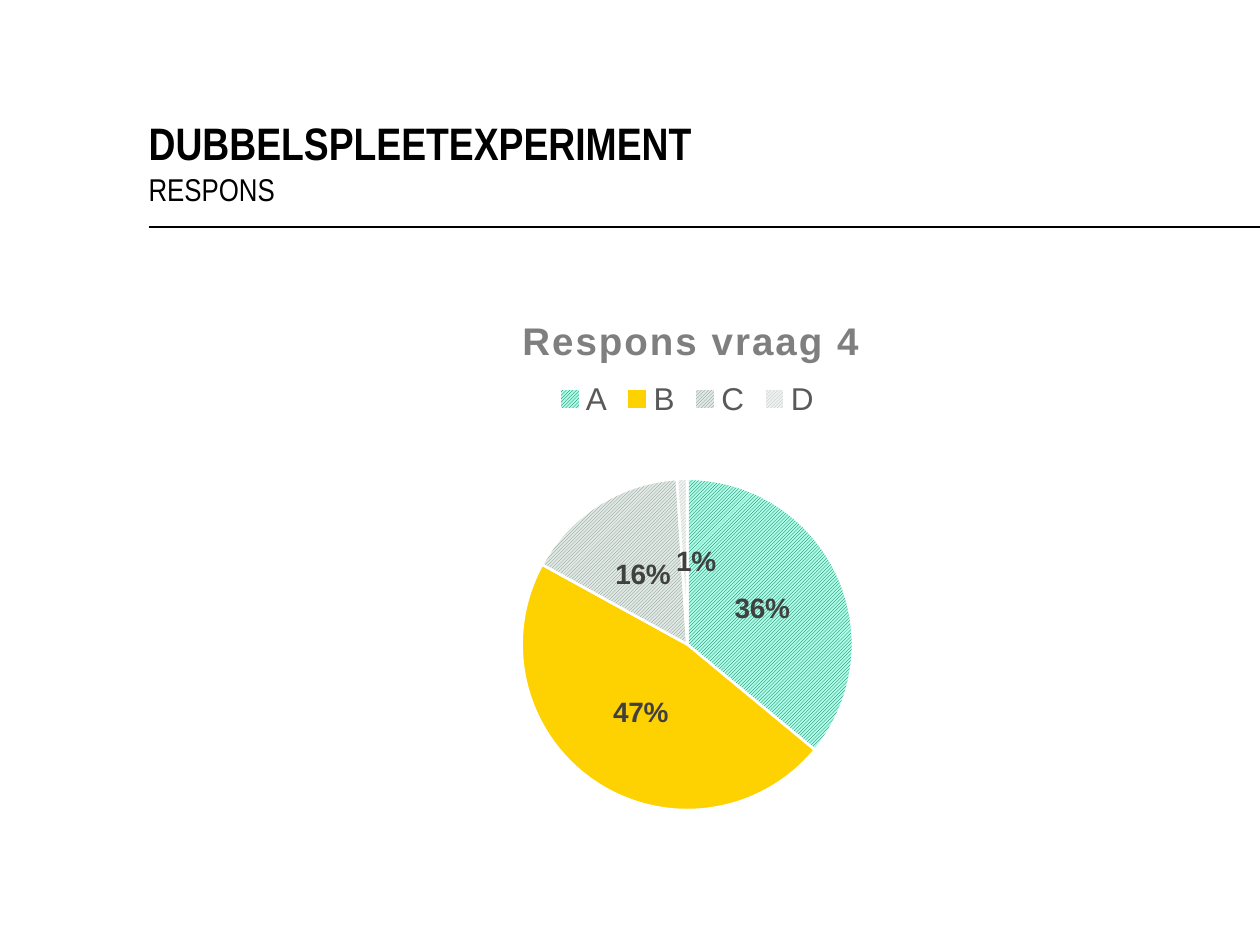
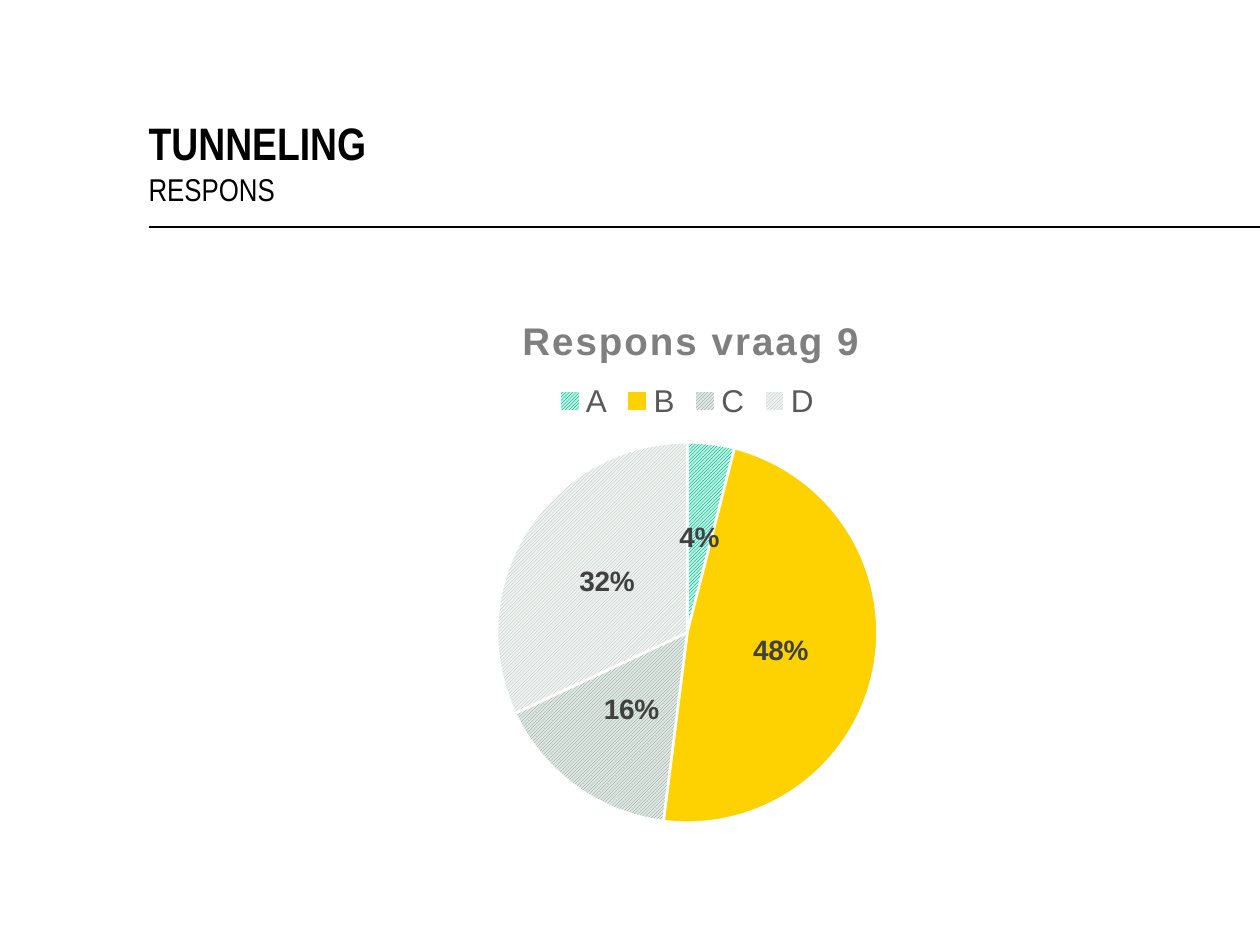
import pptx
import pptx.chart.data
import pptx.dml.color
import pptx.enum.chart
import pptx.enum.dml
import pptx.enum.shapes
import pptx.enum.text
import pptx.oxml
import pptx.oxml.ns
import pptx.util
from dataclasses import dataclass

Inches = pptx.util.Inches
Pt = pptx.util.Pt
RGBColor = pptx.dml.color.RGBColor
qn = pptx.oxml.ns.qn
nsdecls = pptx.oxml.ns.nsdecls

BLACK = RGBColor(0x00, 0x00, 0x00)
WHITE = RGBColor(0xFF, 0xFF, 0xFF)
CHART_TITLE_GREY = RGBColor(0x7F, 0x7F, 0x7F)
LEGEND_GREY = RGBColor(0x59, 0x59, 0x59)
LABEL_GREY = RGBColor(0x40, 0x40, 0x40)
YELLOW = RGBColor(0xFE, 0xD1, 0x00)
DARK_GREEN = RGBColor(0x00, 0x54, 0x3D)
MINT = RGBColor(0xAA, 0xFF, 0xE8)
SAGE = RGBColor(0x6C, 0x8D, 0x7D)
PALE_SAGE = RGBColor(0xE2, 0xE8, 0xE5)
MIST = RGBColor(0xAF, 0xBC, 0xB5)
PALE_MIST = RGBColor(0xEF, 0xF2, 0xF0)

HEADING_FONT = "Arial Narrow"
CHART_FONT = "Arial"
TITLE_ONLY = 5
SLIDE_WIDTH = 10
HEADER_LEFT, HEADER_WIDTH = 1.18, 8.5
RULE_TOP = 1.8
CHART_LEFT, CHART_TOP, CHART_WIDTH = 0.91, 2.24, 9.09

ANSWERS = ("A", "B", "C", "D")
ANSWER_FILLS = (
    (DARK_GREEN, MINT),
    (YELLOW, None),
    (SAGE, PALE_SAGE),
    (MIST, PALE_MIST),
)


@dataclass
class Response:
    topic: str
    question: str
    shares: tuple
    chart_height: float
    pie_top: float
    pie_size: float
    shifted_answer: int | None = None


RESPONSES = (
    Response("DUBBELSPLEETEXPERIMENT", "Respons vraag 4", (36, 47, 16, 1),
             4.34, 1.56, 2.63, shifted_answer=3),
    Response("TUNNELING", "Respons vraag 9", (4, 48, 16, 32),
             4.42, 1.27, 3.02),
)


def style_font(font, name, size, color, bold=False):
    font.name = name
    font.size = Pt(size)
    font.bold = bold
    font.color.rgb = color


def write_heading(shape, top, height, text, size, bold):
    shape.left, shape.top = Inches(HEADER_LEFT), Inches(top)
    shape.width, shape.height = Inches(HEADER_WIDTH), Inches(height)
    frame = shape.text_frame
    frame.auto_size = pptx.enum.text.MSO_AUTO_SIZE.NONE
    frame.word_wrap = True
    frame.vertical_anchor = pptx.enum.text.MSO_ANCHOR.BOTTOM
    frame.margin_left = frame.margin_right = 0
    frame.margin_top = frame.margin_bottom = 0
    paragraph = frame.paragraphs[0]
    paragraph.alignment = pptx.enum.text.PP_ALIGN.LEFT
    paragraph.line_spacing = Pt(25)
    run = paragraph.add_run()
    run.text = text
    style_font(run.font, HEADING_FONT, size, BLACK, bold)


def add_header(slide, topic):
    write_heading(slide.shapes.title, 0.55, 0.8, topic, 26, True)
    subtitle = slide.shapes.add_textbox(0, 0, 0, 0)
    write_heading(subtitle, 1.34, 0.31, "RESPONS", 18, False)
    rule = slide.shapes.add_connector(
        pptx.enum.shapes.MSO_CONNECTOR.STRAIGHT,
        Inches(HEADER_LEFT), Inches(RULE_TOP),
        Inches(SLIDE_WIDTH), Inches(RULE_TOP))
    rule.line.color.rgb = BLACK
    rule.line.width = Pt(1)
    rule._element.spPr.append(
        pptx.oxml.parse_xml(f'<a:effectLst {nsdecls("a")}/>'))


def set_layout(element, index, **settings):
    for old in element.findall(qn("c:layout")):
        element.remove(old)
    values = "".join(f'<c:{key} val="{value}"/>'
                     for key, value in settings.items())
    element.insert(index, pptx.oxml.parse_xml(
        f'<c:layout {nsdecls("c")}>'
        f"<c:manualLayout>{values}</c:manualLayout></c:layout>"))


def fill_slices(series):
    for index, (front, back) in enumerate(ANSWER_FILLS):
        style = series.points[index].format
        if back is None:
            style.fill.solid()
        else:
            style.fill.patterned()
            style.fill.pattern = (
                pptx.enum.dml.MSO_PATTERN.LIGHT_UPWARD_DIAGONAL)
            style.fill.back_color.rgb = back
        style.fill.fore_color.rgb = front
        style.line.color.rgb = WHITE
        style.line.width = Pt(1.5)


def label_slices(series, shifted_answer):
    center = pptx.enum.chart.XL_LABEL_POSITION.CENTER
    labels = series.data_labels
    labels.show_value = False
    labels.show_percentage = True
    labels.number_format = "0%"
    labels.number_format_is_linked = False
    labels.position = center
    style_font(labels.font, CHART_FONT, 16, LABEL_GREY, True)
    if shifted_answer is not None:
        label = series.points[shifted_answer].data_label
        style_font(label.font, CHART_FONT, 16, LABEL_GREY, True)
        label.position = center
        element = series._element.find(".//" + qn("c:dLbl"))
        element.find(qn("c:showVal")).set("val", "0")
        element.find(qn("c:showPercent")).set("val", "1")
        set_layout(element, 1, x=0.01, y=0)


def add_response_chart(slide, response):
    data = pptx.chart.data.CategoryChartData()
    data.categories = ANSWERS
    data.add_series("Series 1", response.shares)
    chart = slide.shapes.add_chart(
        pptx.enum.chart.XL_CHART_TYPE.PIE,
        Inches(CHART_LEFT), Inches(CHART_TOP),
        Inches(CHART_WIDTH), Inches(response.chart_height), data).chart
    style_font(chart.font, CHART_FONT, 10, BLACK)
    edges = {"xMode": "edge", "yMode": "edge"}

    chart.has_title = True
    question = chart.chart_title.text_frame.paragraphs[0].add_run()
    question.text = response.question
    style_font(question.font, CHART_FONT, 22, CHART_TITLE_GREY, True)
    question.font._element.set("spc", "130")
    set_layout(chart.chart_title._element, 1, **edges, x=0.35, y=0.05)

    chart.has_legend = True
    chart.legend.position = pptx.enum.chart.XL_LEGEND_POSITION.TOP
    chart.legend.include_in_layout = False
    style_font(chart.legend.font, CHART_FONT, 18, LEGEND_GREY)
    set_layout(chart.legend._element, 1, **edges, x=0.38, y=0.17)

    plot = chart.plots[0]
    plot.vary_by_categories = True
    fill_slices(plot.series[0])
    label_slices(plot.series[0], response.shifted_answer)
    width = response.pie_size / CHART_WIDTH
    set_layout(chart._chartSpace.find(".//" + qn("c:plotArea")), 0,
               layoutTarget="inner", **edges,
               x=(1 - width) / 2,
               y=response.pie_top / response.chart_height,
               w=width, h=response.pie_size / response.chart_height)


def add_response_slide(deck, response):
    slide = deck.slides.add_slide(deck.slide_layouts[TITLE_ONLY])
    add_header(slide, response.topic)
    add_response_chart(slide, response)


def main():
    deck = pptx.Presentation()
    deck.slide_width = Inches(SLIDE_WIDTH)
    deck.slide_height = Inches(7.5)
    for response in RESPONSES:
        add_response_slide(deck, response)
    deck.save("out.pptx")


if __name__ == "__main__":
    main()
